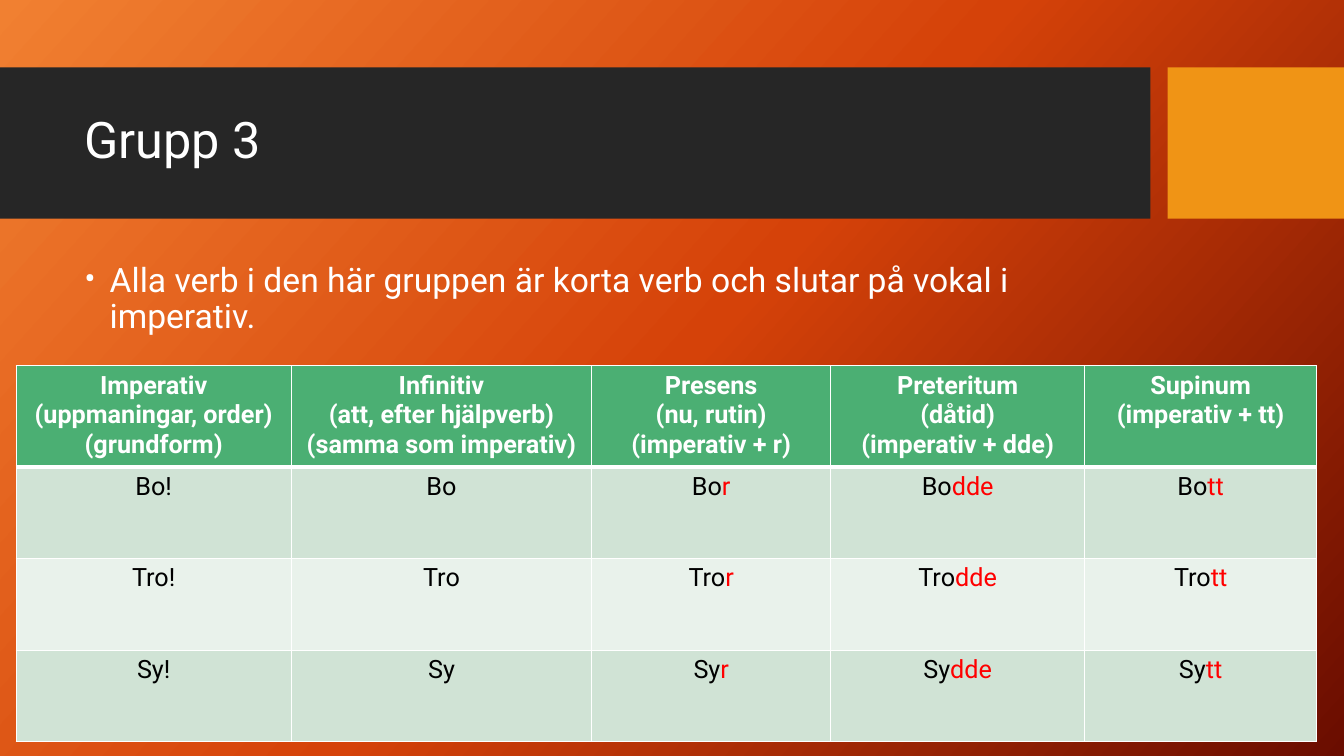
import copy
from dataclasses import dataclass

import pptx
import pptx.dml.color
import pptx.enum.shapes
import pptx.enum.text
import pptx.oxml
import pptx.oxml.ns
import pptx.util


@dataclass(frozen=True)
class Theme:
    """Colours, font and type sizes of the slide."""
    font: str = "Roboto"
    title: int = 36
    body: int = 24
    cell: int = 18
    white: str = "FFFFFF"
    black: str = "000000"
    red: str = "FF0000"
    bar: str = "262626"
    block: str = "F09415"
    head: str = "4BAF73"
    bands: tuple = ("D0E3D5", "E9F2EB")
    glow: tuple = ((0, "F18031"), (0.5, "D54209"), (1, "6A0D00"))
    angle: int = 42


THEME = Theme()
HEADS = (
    ("Imperativ", "(uppmaningar, order)", "(grundform)"),
    ("Infinitiv", "(att, efter hjälpverb)", "(samma som imperativ)"),
    ("Presens", "(nu, rutin)", "(imperativ + r)"),
    ("Preteritum", "(dåtid)", "(imperativ + dde)"),
    ("Supinum", "(imperativ + tt)"),
)
WIDTHS = (2.73, 2.98, 2.37, 2.52, 2.3)
VERBS = ("Bo", "Tro", "Sy")
ENDS = (("!", THEME.black), ("", THEME.black), ("r", THEME.red),
        ("dde", THEME.red), ("tt", THEME.red))


def rgb(code):
    """Turn a hex code into a colour."""
    return pptx.dml.color.RGBColor.from_string(code)


def part(box, left, top, width, height):
    """Return the part of a box given in per cent of its size."""
    x, y, w, h = box
    return (round(x + w * left / 100), round(y + h * top / 100),
            round(w * width / 100), round(h * height / 100))


def style(font, size, color, bold=False):
    """Set the look of a font."""
    font.name = THEME.font
    font.size = pptx.util.Pt(size)
    font.bold = bold
    font.color.rgb = rgb(color)


def paint(slide):
    """Fill the background with the slanted gradient."""
    fill = slide.background.fill
    fill.gradient()
    fill.gradient_angle = 360 - THEME.angle
    stops = slide.element.find(".//" + pptx.oxml.ns.qn("a:gsLst"))
    stops.append(copy.deepcopy(stops[-1]))
    for stop, (place, color) in zip(fill.gradient_stops, THEME.glow):
        stop.position = place
        stop.color.rgb = rgb(color)


def block(slide, box, color):
    """Draw a plain filled rectangle."""
    shape = slide.shapes.add_shape(
        pptx.enum.shapes.MSO_SHAPE.RECTANGLE, *box)
    shape.shadow.inherit = False
    shape.fill.solid()
    shape.fill.fore_color.rgb = rgb(color)
    shape.line.fill.background()


def write(slide, box, text, size, anchor, bullet=False):
    """Add a wrapped text box with one paragraph."""
    frame = slide.shapes.add_textbox(*box).text_frame
    frame.word_wrap = True
    frame.vertical_anchor = anchor
    para = frame.paragraphs[0]
    para.text = text
    para.line_spacing = 0.9
    if bullet:
        props = para._p.get_or_add_pPr()
        indent = pptx.util.Inches(0.25)
        props.set("marL", str(indent))
        props.set("indent", str(-indent))
        space = pptx.oxml.ns.nsdecls("a")
        for mark in (f'buFont {space} typeface="{THEME.font}"',
                     f'buChar {space} char="•"'):
            props.append(pptx.oxml.parse_xml(f"<a:{mark}/>"))
    style(para.font, size, THEME.white)


def banner(slide, box):
    """Draw the title bar and the block beside it."""
    block(slide, part(box, 0, 0, 85.6, 100), THEME.bar)
    block(slide, part(box, 86.87, 0, 13.13, 100), THEME.block)
    write(slide, part(box, 5.55, 10, 78.84, 78.67), "Grupp 3",
          THEME.title, pptx.enum.text.MSO_ANCHOR.MIDDLE)


def border(cell, row):
    """Draw the white edges, thick beneath the header row."""
    props = cell._tc.get_or_add_tcPr()
    thick = {"T": 3 if row == 1 else 1, "B": 3 if row == 0 else 1}
    for side in "LRTB":
        width = pptx.util.Pt(thick.get(side, 1))
        props.append(pptx.oxml.parse_xml(
            f'<a:ln{side} {pptx.oxml.ns.nsdecls("a")} w="{width}">'
            f'<a:solidFill><a:srgbClr val="{THEME.white}"/></a:solidFill>'
            f'</a:ln{side}>'))


def enter(cell, row, color, lines):
    """Fill a cell with centred lines of coloured runs."""
    border(cell, row)
    cell.fill.solid()
    cell.fill.fore_color.rgb = rgb(color)
    frame = cell.text_frame
    for i, runs in enumerate(lines):
        para = frame.add_paragraph() if i else frame.paragraphs[0]
        para.alignment = pptx.enum.text.PP_ALIGN.CENTER
        style(para.font, THEME.cell, runs[0][1], row == 0)
        for text, tint in runs:
            run = para.add_run()
            run.text = text
            style(run.font, THEME.cell, tint, row == 0)


def forms(slide, box):
    """Build the table of verb forms."""
    table = slide.shapes.add_table(
        len(VERBS) + 1, len(HEADS), *box).table
    for col, width in zip(table.columns, WIDTHS):
        col.width = round(box[2] * width / sum(WIDTHS))
    for c, head in enumerate(HEADS):
        enter(table.cell(0, c), 0, THEME.head,
              [[(line, THEME.white)] for line in head])
    for r, verb in enumerate(VERBS, 1):
        for c, (end, tint) in enumerate(ENDS):
            runs = [(verb, THEME.black)] + ([(end, tint)] if end else [])
            enter(table.cell(r, c), r, THEME.bands[(r - 1) % 2], [runs])


def main():
    """Build the slide and save it."""
    deck = pptx.Presentation()
    deck.slide_width = pptx.util.Inches(13.33)
    deck.slide_height = pptx.util.Inches(7.5)
    page = (0, 0, deck.slide_width, deck.slide_height)
    slide = deck.slides.add_slide(deck.slide_layouts[6])
    paint(slide)
    banner(slide, part(page, 0, 8.93, 100, 20))
    write(slide, part(page, 5.55, 34.13, 78.84, 52.53),
          "Alla verb i den här gruppen är korta verb och slutar på vokal "
          "i imperativ.",
          THEME.body, pptx.enum.text.MSO_ANCHOR.TOP, bullet=True)
    forms(slide, part(page, 1.2, 48.4, 96.77, 48.53))
    deck.save("out.pptx")


if __name__ == "__main__":
    main()
